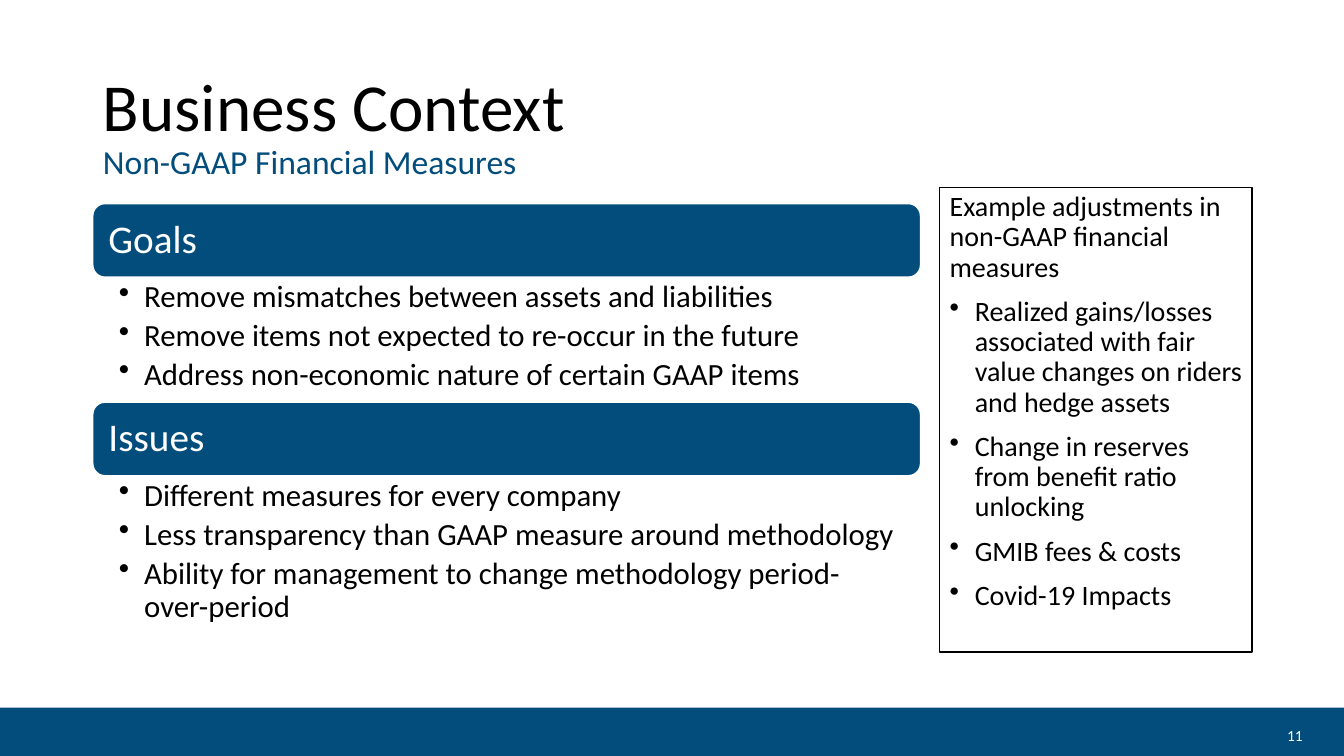
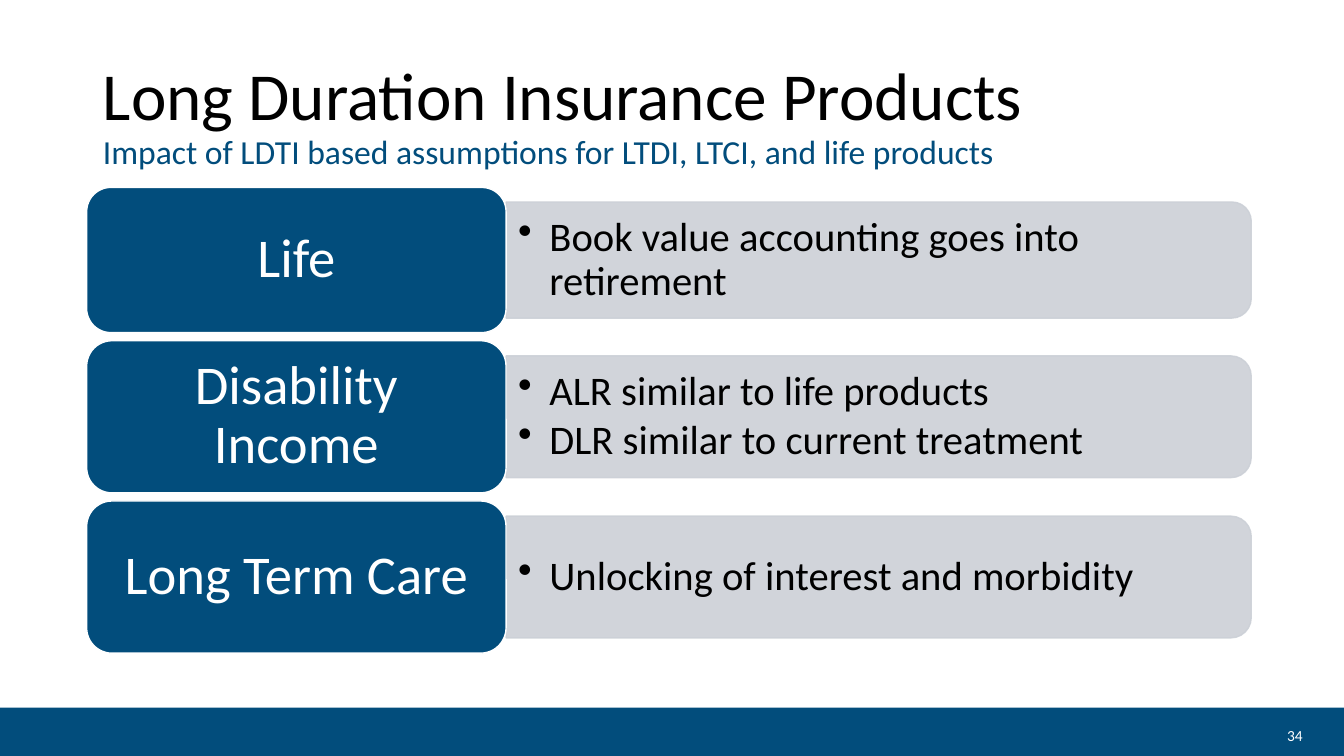
import pptx
import pptx.dml.color
import pptx.enum.shapes
import pptx.enum.text
import pptx.oxml
import pptx.oxml.ns
import pptx.util

Inches = pptx.util.Inches
Pt = pptx.util.Pt
SHAPES = pptx.enum.shapes.MSO_SHAPE
ALIGN = pptx.enum.text.PP_ALIGN
ANCHOR = pptx.enum.text.MSO_ANCHOR

COLORS = {"navy": "024D7C", "gray": "CCD0D7", "black": "000000", "white": "FFFFFF"}
FONT = "Calibri"
SLIDE_WIDTH, SLIDE_HEIGHT = 13.33, 7.5
BAND_TOP = 7.02
DEFAULT_INSETS = (0.1, 0.05, 0.1, 0.05)

CONTEXT = {
    "title": "Business Context",
    "subtitle": "Non-GAAP Financial Measures",
    "title_height": 1.61,
    "number": "11",
}
SECTIONS = [
    ("Goals", 1.24, [
        "Remove mismatches between assets and liabilities",
        "Remove items not expected to re-occur in the future",
        "Address non-economic nature of certain GAAP items",
    ]),
    ("Issues", 1.58, [
        "Different measures for every company",
        "Less transparency than GAAP measure around methodology",
        "Ability for management to change methodology period-over-period",
    ]),
]
EXAMPLES_HEADING = "Example adjustments in non-GAAP financial measures"
EXAMPLES = [
    "Realized gains/losses associated with fair value changes on riders and hedge assets",
    "Change in reserves from benefit ratio unlocking",
    "GMIB fees & costs",
    "Covid-19 Impacts",
]

PRODUCTS = {
    "title": "Long Duration Insurance Products",
    "subtitle": "Impact of LDTI based assumptions for LTDI, LTCI, and life products",
    "title_height": 1.4,
    "number": "34",
}
PRODUCT_ROWS = [
    ("Life", 1.44, ["Book value accounting goes into retirement"]),
    ("Disability Income", 1.51, [
        "ALR similar to life products",
        "DLR similar to current treatment",
    ]),
    ("Long Term Care", 1.51, ["Unlocking of interest and morbidity"]),
]


def rgb(color):
    return pptx.dml.color.RGBColor.from_string(COLORS[color])


def style_font(font, size, color):
    font.name = FONT
    font.size = Pt(size)
    font.color.rgb = rgb(color)


def add_block(slide, kind, box, fill, line=None):
    shape = slide.shapes.add_shape(kind, *map(Inches, box))
    shape.shadow.inherit = False
    shape.fill.solid()
    shape.fill.fore_color.rgb = rgb(fill)
    if line:
        shape.line.color.rgb = rgb(line)
        shape.line.width = Pt(1)
    else:
        shape.line.fill.background()
    return shape


def add_bullet(paragraph, indent):
    properties = paragraph._p.get_or_add_pPr()
    properties.set("marL", str(Inches(indent)))
    properties.set("indent", str(-Inches(indent)))
    bullet = pptx.oxml.parse_xml(
        f'<a:buChar {pptx.oxml.ns.nsdecls("a")} char="•"/>')
    properties.append(bullet)


def write(shape, texts, size, color="black", align=ALIGN.LEFT, anchor=ANCHOR.TOP,
          insets=DEFAULT_INSETS, indent=0, before=0, after=0, plain_first=False):
    frame = shape.text_frame
    frame.word_wrap = True
    frame.vertical_anchor = anchor
    (frame.margin_left, frame.margin_top,
     frame.margin_right, frame.margin_bottom) = map(Inches, insets)
    for index, text in enumerate(texts):
        paragraph = frame.add_paragraph() if index else frame.paragraphs[0]
        paragraph.text = text
        if indent and (index or not plain_first):
            add_bullet(paragraph, indent)
        paragraph.alignment = align
        paragraph.line_spacing = 0.9
        paragraph.space_before = Pt(before if index else 0)
        paragraph.space_after = Pt(after)
        style_font(paragraph.font, size, color)


def add_text(slide, box, texts, size, **options):
    write(slide.shapes.add_textbox(*map(Inches, box)), texts, size, **options)


def add_slide(presentation, content):
    slide = presentation.slides.add_slide(presentation.slide_layouts[5])
    title = slide.shapes.title
    title.left, title.top = Inches(0.92), Inches(0.46)
    title.width, title.height = Inches(11.5), Inches(content["title_height"])
    title.text_frame.vertical_anchor = ANCHOR.MIDDLE
    paragraph = title.text_frame.paragraphs[0]
    paragraph.alignment = ALIGN.LEFT
    paragraph.line_spacing = 0.9
    heading = paragraph.add_run()
    heading.text = content["title"]
    style_font(heading.font, 48, "black")
    paragraph.add_line_break()
    subtitle = paragraph.add_run()
    subtitle.text = content["subtitle"]
    style_font(subtitle.font, 24, "navy")

    add_block(slide, SHAPES.RECTANGLE,
              (0, BAND_TOP, SLIDE_WIDTH, SLIDE_HEIGHT - BAND_TOP), "navy")
    add_text(slide, (12.31, 7.2, 0.71, 0.22), [content["number"]], 11,
             color="white", align=ALIGN.RIGHT, anchor=ANCHOR.MIDDLE)
    return slide


def build_context(presentation):
    slide = add_slide(presentation, CONTEXT)
    examples = add_block(slide, SHAPES.RECTANGLE, (9.32, 1.86, 3.1, 4.61), "white", "black")
    write(examples, [EXAMPLES_HEADING] + EXAMPLES, 20,
          indent=0.25, before=10, plain_first=True)

    left, top, width, header_height = 0.92, 2.02, 8.21, 0.73
    for name, list_height, points in SECTIONS:
        header = add_block(slide, SHAPES.ROUNDED_RECTANGLE,
                           (left, top, width, header_height), "navy", "white")
        write(header, [name], 28, color="white", anchor=ANCHOR.MIDDLE,
              insets=(0.12, 0.12, 0.12, 0.12))
        top += header_height
        add_text(slide, (left, top, width, list_height), points, 22,
                 insets=(0.26, 0.04, 0.22, 0.04), indent=0.25, after=4)
        top += list_height


def add_panel(slide, left, middle, width, height):
    box = (left + (width - height) / 2, middle - width / 2, height, width)
    panel = add_block(slide, SHAPES.ROUND_2_SAME_RECTANGLE, box, "gray", "gray")
    panel.rotation = 90
    for color in panel._element.spPr.iter(pptx.oxml.ns.qn("a:srgbClr")):
        color.append(pptx.oxml.parse_xml(
            f'<a:alpha {pptx.oxml.ns.nsdecls("a")} val="90000"/>'))


def build_products(presentation):
    slide = add_slide(presentation, PRODUCTS)
    left, top, label_width, panel_width, gap = 0.86, 1.86, 4.16, 7.39, 0.08
    panel_left = left + label_width
    for name, height, points in PRODUCT_ROWS:
        panel_height = height * 0.8
        middle = top + height / 2
        add_panel(slide, panel_left, middle, panel_width, panel_height)
        add_text(slide, (panel_left, middle - panel_height / 2, 7.34, panel_height),
                 points, 29, anchor=ANCHOR.MIDDLE,
                 insets=(0.12, 0.06, 0.12, 0.06), indent=0.31, after=4)
        label = add_block(slide, SHAPES.ROUNDED_RECTANGLE,
                          (left, top, label_width, height), "navy", "white")
        write(label, [name], 39, color="white", align=ALIGN.CENTER,
              anchor=ANCHOR.MIDDLE, insets=(0.16, 0.08, 0.16, 0.08))
        top += height + gap


def main():
    presentation = pptx.Presentation()
    presentation.slide_width = Inches(SLIDE_WIDTH)
    presentation.slide_height = Inches(SLIDE_HEIGHT)
    build_context(presentation)
    build_products(presentation)
    presentation.save("out.pptx")


if __name__ == "__main__":
    main()
